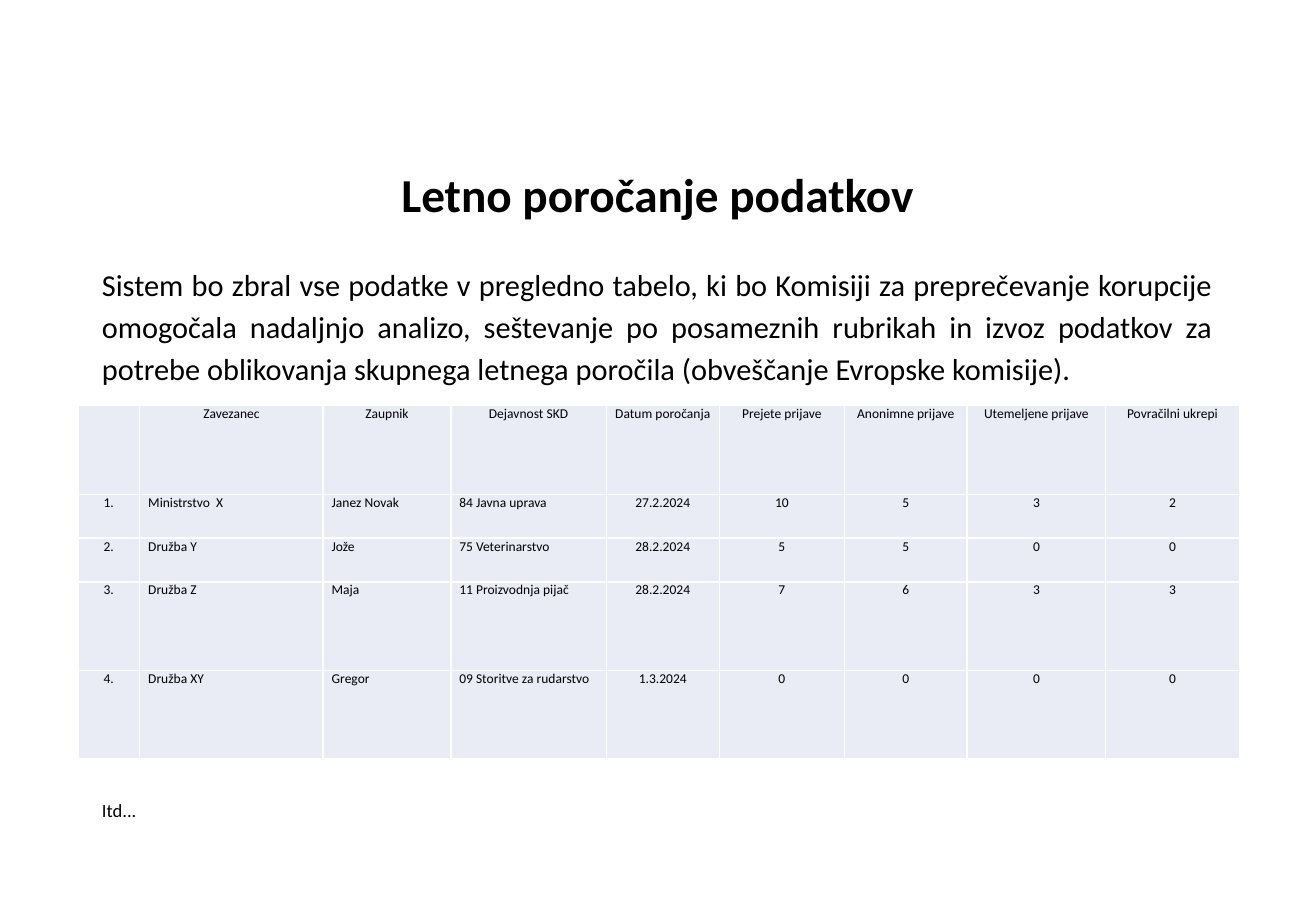
import dataclasses

import pptx
import pptx.dml.color
import pptx.enum.text
import pptx.oxml
import pptx.oxml.ns
import pptx.presentation
import pptx.slide
import pptx.table
import pptx.text.text
import pptx.util

Align = pptx.enum.text.PP_ALIGN
Anchor = pptx.enum.text.MSO_ANCHOR

EMU_PER_PX = 9144  # 100 px to the inch


@dataclasses.dataclass(frozen=True)
class Theme:
    font: str = "Calibri"
    text: str = "000000"
    cell: str = "E9EBF5"
    border: str = "FFFFFF"
    title_size: int = 28
    body_size: int = 18
    note_size: int = 11
    table_size: int = 8
    border_width: int = 1


THEME = Theme()


@dataclasses.dataclass(frozen=True)
class TextBlock:
    text: str
    left: int
    top: int
    width: int
    height: int
    size: int
    align: Align
    anchor: Anchor = Anchor.MIDDLE
    bold: bool = False
    line_spacing: float = 1.0


@dataclasses.dataclass(frozen=True)
class Column:
    heading: str
    width: int
    align: Align = Align.CENTER


TEXT_BLOCKS = (
    TextBlock("Letno poročanje podatkov", 74, 125, 934, 75, THEME.title_size,
              Align.CENTER, bold=True, line_spacing=0.9),
    TextBlock("Sistem bo zbral vse podatke v pregledno tabelo, ki bo Komisiji za "
              "preprečevanje korupcije omogočala nadaljnjo analizo, seštevanje po "
              "posameznih rubrikah in izvoz podatkov za potrebe oblikovanja skupnega "
              "letnega poročila (obveščanje Evropske komisije).",
              74, 210, 934, 504, THEME.body_size, Align.JUSTIFY,
              anchor=Anchor.TOP, line_spacing=1.15),
    TextBlock("Itd...", 74, 652, 55, 29, THEME.note_size, Align.JUSTIFY),
)

COLUMNS = (
    Column("", 51),
    Column("Zavezanec", 151, Align.JUSTIFY),
    Column("Zaupnik", 105, Align.JUSTIFY),
    Column("Dejavnost SKD", 128, Align.LEFT),
    Column("Datum poročanja", 93),
    Column("Prejete prijave", 103),
    Column("Anonimne prijave", 101),
    Column("Utemeljene prijave", 114),
    Column("Povračilni ukrepi", 110),
)
REPORTS = (
    ("1.", "Ministrstvo  X", "Janez Novak", "84 Javna uprava", "27.2.2024", "10", "5", "3", "2"),
    ("2.", "Družba Y", "Jože", "75 Veterinarstvo", "28.2.2024", "5", "5", "0", "0"),
    ("3.", "Družba Z", "Maja", "11 Proizvodnja pijač", "28.2.2024", "7", "6", "3", "3"),
    ("4.", "Družba XY", "Gregor", "09 Storitve za rudarstvo", "1.3.2024", "0", "0", "0", "0"),
)
TABLE_LEFT, TABLE_TOP = 64, 334
ROW_HEIGHTS = (73, 36, 36, 73, 73)
CELL_MARGIN = 7


def px(length: int) -> pptx.util.Emu:
    return pptx.util.Emu(length * EMU_PER_PX)


def set_format(target: object, values: dict[str, object]) -> None:
    for name, value in values.items():
        setattr(target, name, value)


def write_text(frame: pptx.text.text.TextFrame, text: str, size: int, align: Align,
               bold: bool = False, line_spacing: float = 1.0) -> None:
    paragraph = frame.paragraphs[0]
    set_format(paragraph, {"alignment": align, "line_spacing": line_spacing})
    run = paragraph.add_run()
    run.text = text
    set_format(run.font, {"name": THEME.font, "size": pptx.util.Pt(size), "bold": bold})
    run.font.color.rgb = pptx.dml.color.RGBColor.from_string(THEME.text)


def add_text_block(slide: pptx.slide.Slide, block: TextBlock) -> None:
    shape = slide.shapes.add_textbox(px(block.left), px(block.top),
                                     px(block.width), px(block.height))
    set_format(shape.text_frame, {"word_wrap": True, "vertical_anchor": block.anchor})
    write_text(shape.text_frame, block.text, block.size, block.align,
               block.bold, block.line_spacing)


def style_cell(cell: pptx.table._Cell) -> None:
    """Set margins, then borders, then fill, in the order the schema asks for."""
    set_format(cell, {"margin_left": px(CELL_MARGIN), "margin_right": px(CELL_MARGIN),
                      "margin_top": 0, "margin_bottom": 0})
    properties = cell._tc.get_or_add_tcPr()
    for side in "LRTB":
        properties.append(pptx.oxml.parse_xml(
            f'<a:ln{side} {pptx.oxml.ns.nsdecls("a")} w="{pptx.util.Pt(THEME.border_width)}">'
            f'<a:solidFill><a:srgbClr val="{THEME.border}"/></a:solidFill></a:ln{side}>'))
    cell.fill.solid()
    cell.fill.fore_color.rgb = pptx.dml.color.RGBColor.from_string(THEME.cell)


def add_report_table(slide: pptx.slide.Slide) -> None:
    rows = (tuple(column.heading for column in COLUMNS), *REPORTS)
    table = slide.shapes.add_table(
        len(rows), len(COLUMNS), px(TABLE_LEFT), px(TABLE_TOP),
        px(sum(column.width for column in COLUMNS)), px(sum(ROW_HEIGHTS))).table
    set_format(table, {"first_row": False, "horz_banding": False})
    for index, column in enumerate(COLUMNS):
        table.columns[index].width = px(column.width)
    for row_index, (height, texts) in enumerate(zip(ROW_HEIGHTS, rows)):
        table.rows[row_index].height = px(height)
        for column_index, (column, text) in enumerate(zip(COLUMNS, texts)):
            cell = table.cell(row_index, column_index)
            style_cell(cell)
            if text:
                align = column.align if row_index else Align.CENTER
                write_text(cell.text_frame, text, THEME.table_size, align)


def main() -> None:
    presentation = pptx.Presentation()
    set_format(presentation, {"slide_width": px(1083), "slide_height": px(750)})
    slide = presentation.slides.add_slide(presentation.slide_layouts[6])
    title, body, note = TEXT_BLOCKS
    add_text_block(slide, title)
    add_text_block(slide, body)
    add_report_table(slide)
    add_text_block(slide, note)
    presentation.save("out.pptx")


if __name__ == "__main__":
    main()
